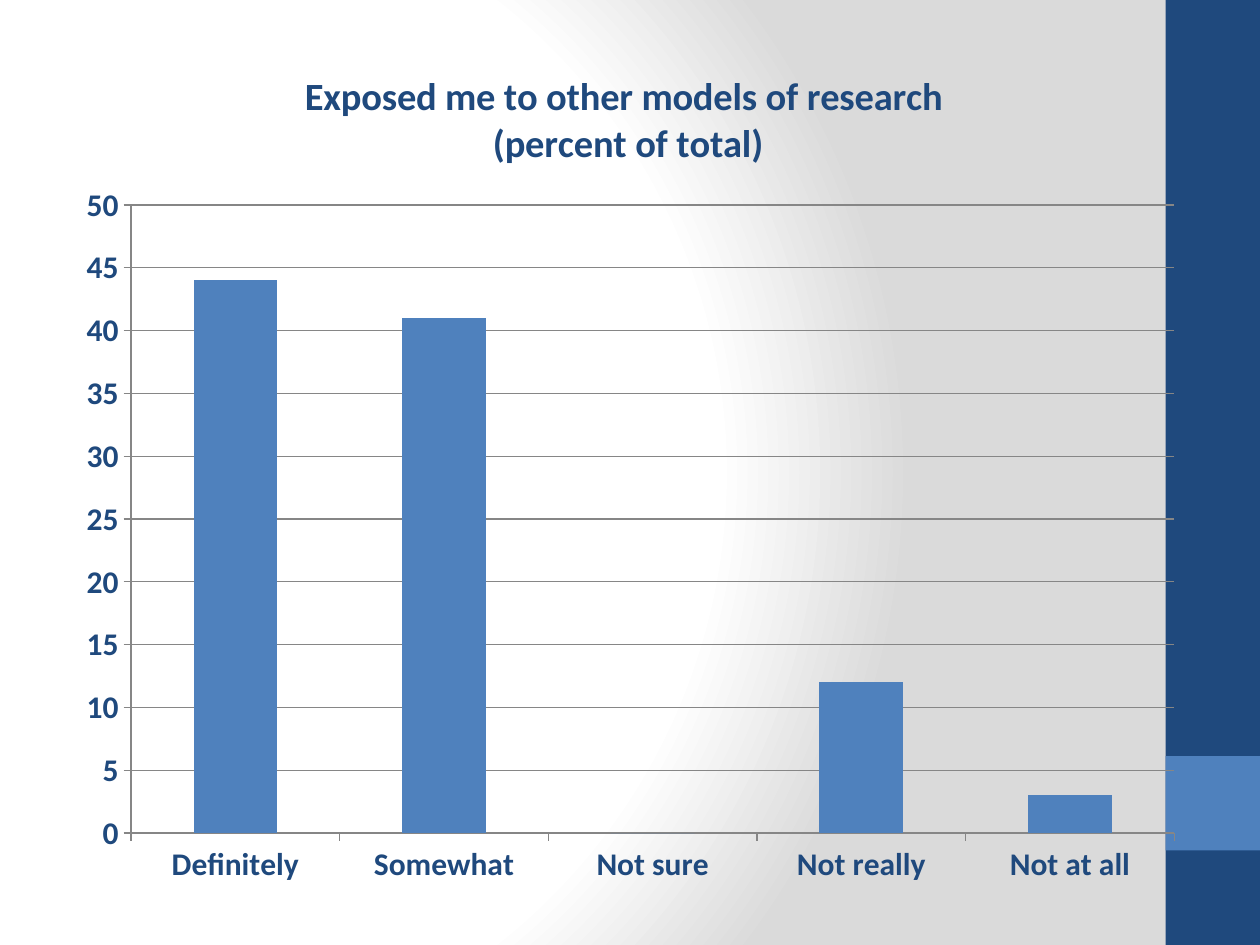
import typing
import lxml.etree
import pptx
import pptx.chart.data
import pptx.dml.color
import pptx.enum.chart
import pptx.enum.shapes
import pptx.oxml
import pptx.oxml.ns
import pptx.util

Inches = pptx.util.Inches
Pt = pptx.util.Pt
qn = pptx.oxml.ns.qn

COLORS = {"navy": "1F497D", "blue": "4F81BD", "white": "FFFFFF",
          "silver": "DADADA", "line": "868686", "black": "000000"}
FONT = "Calibri"


class Band(typing.NamedTuple):
    top: float
    height: float
    color: str


BANDS = [Band(0, 7.5, "navy"), Band(6, 0.75, "blue")]
STOPS = [(0, "white"), (75, "white"), (100, "silver")]
TITLE = ["Exposed me to other models of research ", "(percent of total)"]
VALUES = {"Definitely": 44, "Somewhat": 41, "Not sure": 0,
          "Not really": 12, "Not at all": 3}


def rgb(name: str) -> pptx.dml.color.RGBColor:
    return pptx.dml.color.RGBColor.from_string(COLORS[name])


def set_font(font, size: float, color: str, bold: bool) -> None:
    font.name = FONT
    font.size = Pt(size)
    font.bold = bold
    font.color.rgb = rgb(color)


def set_line(line) -> None:
    line.color.rgb = rgb("line")
    line.width = Pt(0.75)


def fill_back(slide) -> None:
    """Give the slide a round gradient."""
    slide.background.fill.gradient()
    grad = slide.background._cSld.find(".//" + qn("a:gradFill"))
    for child in list(grad):
        grad.remove(child)
    stops = lxml.etree.SubElement(grad, qn("a:gsLst"))
    for pos, color in STOPS:
        stop = lxml.etree.SubElement(stops, qn("a:gs"), pos=str(pos * 1000))
        lxml.etree.SubElement(stop, qn("a:srgbClr"), val=COLORS[color])
    shade = lxml.etree.SubElement(grad, qn("a:path"))
    shade.set("path", "circle")
    lxml.etree.SubElement(shade, qn("a:fillToRect"), l="20000", t="50000",
                          r="100000", b="50000")


def add_band(slide, band: Band) -> None:
    shape = slide.shapes.add_shape(
        pptx.enum.shapes.MSO_SHAPE.RECTANGLE, Inches(9.25), Inches(band.top),
        Inches(0.75), Inches(band.height))
    shape.shadow.inherit = False
    shape.fill.solid()
    shape.fill.fore_color.rgb = rgb(band.color)
    shape.line.fill.background()


def place(part, sizes: typing.Dict[str, float], inner: bool = False) -> None:
    """Set a chart part's place as shares of the chart."""
    layout = part.find(qn("c:layout"))
    if layout is None:
        layout = pptx.oxml.parse_xml(
            "<c:layout %s/>" % pptx.oxml.ns.nsdecls("c"))
        text = part.find(qn("c:tx"))
        if text is None:
            part.insert(0, layout)
        else:
            text.addnext(layout)
    manual = lxml.etree.SubElement(layout, qn("c:manualLayout"))
    if inner:
        lxml.etree.SubElement(manual, qn("c:layoutTarget"), val="inner")
    for key in ("x", "y"):
        lxml.etree.SubElement(manual, qn("c:%sMode" % key), val="edge")
    for key, size in sizes.items():
        lxml.etree.SubElement(manual, qn("c:" + key), val=str(size))


def add_title(chart) -> None:
    chart.has_title = True
    title = chart.chart_title
    title.include_in_layout = False
    frame = title.text_frame
    frame.text = "\n".join(TITLE)
    for para in frame.paragraphs:
        set_font(para.font, 22, "navy", True)
    place(title._element, {"x": 0.21, "y": 0.03})


def add_chart(slide) -> None:
    kinds = pptx.enum.chart
    data = pptx.chart.data.CategoryChartData()
    data.categories = list(VALUES)
    data.add_series("Series 1", list(VALUES.values()))
    chart = slide.shapes.add_chart(
        kinds.XL_CHART_TYPE.COLUMN_CLUSTERED, Inches(0.5), Inches(0.33),
        Inches(9), Inches(6.83), data).chart
    chart.has_legend = False
    set_font(chart.font, 18, "black", False)
    add_title(chart)

    # Bars
    plot = chart.plots[0]
    plot.gap_width = 150
    plot.vary_by_categories = False
    fill = plot.series[0].format.fill
    fill.solid()
    fill.fore_color.rgb = rgb("blue")

    # Axes and grid
    for axis in (chart.category_axis, chart.value_axis):
        set_font(axis.tick_labels.font, 18, "navy", True)
        axis.major_tick_mark = kinds.XL_TICK_MARK.OUTSIDE
        axis.minor_tick_mark = kinds.XL_TICK_MARK.NONE
        set_line(axis.format.line)
    scale = chart.value_axis
    scale.minimum_scale, scale.maximum_scale, scale.major_unit = 0, 50, 5
    scale.has_major_gridlines = True
    set_line(scale.major_gridlines.format.line)
    area = chart._chartSpace.find(".//" + qn("c:plotArea"))
    place(area, {"x": 0.06, "y": 0.19, "w": 0.92, "h": 0.73}, True)


def main() -> None:
    deck = pptx.Presentation()
    deck.slide_width, deck.slide_height = Inches(10), Inches(7.5)
    slide = deck.slides.add_slide(deck.slide_layouts[6])
    fill_back(slide)
    for band in BANDS:
        add_band(slide, band)
    add_chart(slide)
    deck.save("out.pptx")


if __name__ == "__main__":
    main()
